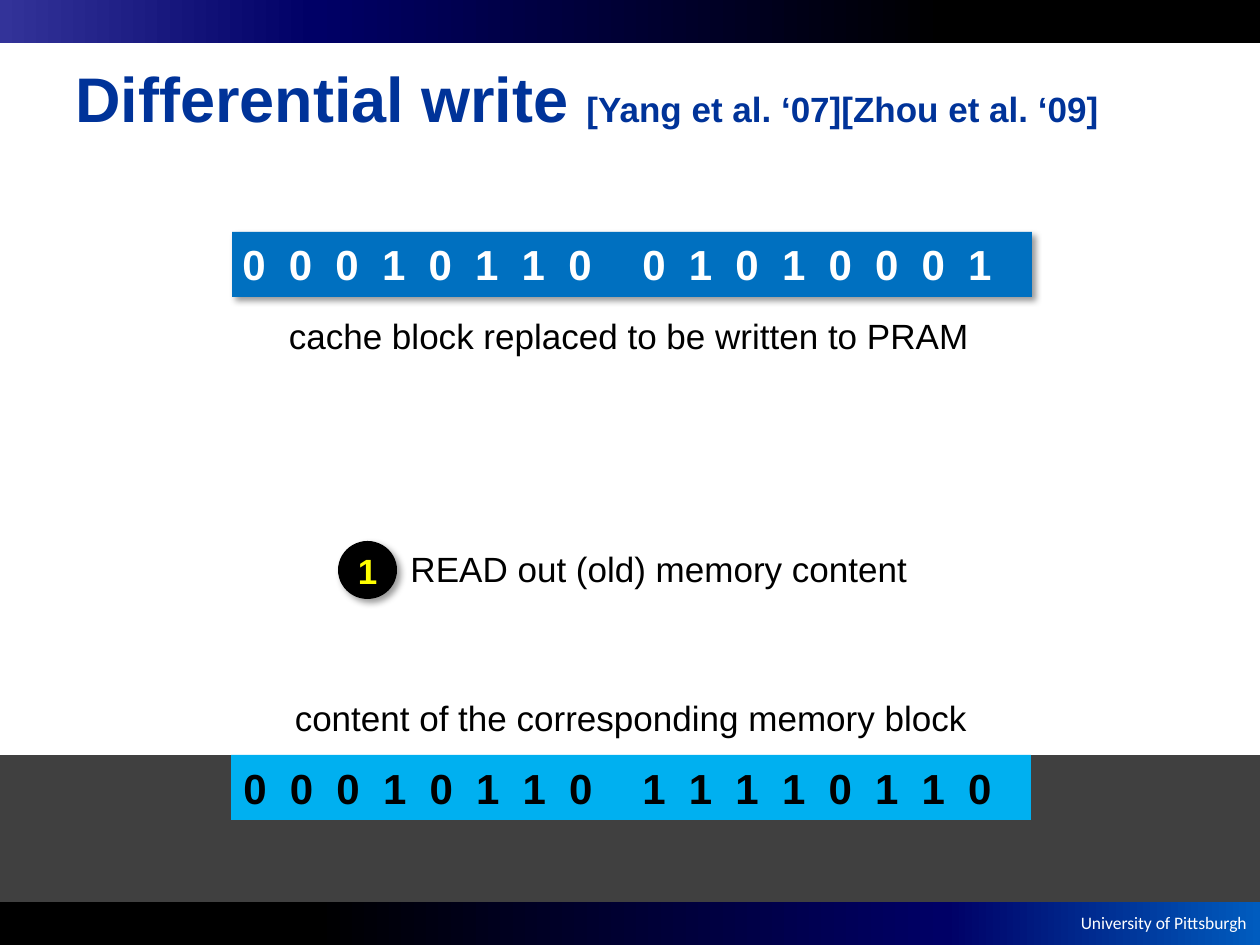
"""Build the slide on differential writes to PRAM."""
from copy import deepcopy

from lxml import etree
from pptx import Presentation
from pptx import util as u
from pptx.dml.color import RGBColor
from pptx.enum import shapes, text
from pptx.oxml import ns

PX = 914400 / 126
color = RGBColor.from_string
LEFT, CENTER, RIGHT = text.PP_ALIGN.LEFT, text.PP_ALIGN.CENTER, text.PP_ALIGN.RIGHT

deck = Presentation()
deck.slide_width, deck.slide_height = u.Inches(10), u.Inches(7.5)
page = deck.slides.add_slide(deck.slide_layouts[6])


def add_block(left, top, width, height, fill, shadow=False, kind=shapes.MSO_SHAPE.RECTANGLE):
    block = page.shapes.add_shape(kind, *(u.Emu(round(n * PX)) for n in (left, top, width, height)))
    block.shadow.inherit = False
    block.line.fill.background()
    block.fill.solid()
    block.fill.fore_color.rgb = color(fill)
    if shadow:
        effects = block._element.spPr.find(ns.qn("a:effectLst"))
        outer = etree.SubElement(effects, ns.qn("a:outerShdw"), blurRad=str(u.Pt(4)),
                                 dist=str(u.Pt(3)), dir="2700000", algn="tl", rotWithShape="0")
        tint = etree.SubElement(outer, ns.qn("a:srgbClr"), val="000000")
        etree.SubElement(tint, ns.qn("a:alpha"), val="40000")
    return block


def add_label(words, left, top, width, height, size, ink="000000", align=CENTER, bold=False, font="Arial"):
    box = page.shapes.add_textbox(*(u.Emu(round(n * PX)) for n in (left, top, width, height)))
    box.text_frame.word_wrap = True
    para = box.text_frame.paragraphs[0]
    para.text = words
    para.alignment = align
    span = para.runs[0]
    span.font.size, span.font.name, span.font.bold = u.Pt(size), font, bold
    span.font.color.rgb = color(ink)
    return box


for top, stops in (
    (902, ((0, "000000"), (0.25, "000000"), (0.75, "000066"), (1, "005CBF"))),
    (0, ((0, "333399"), (0.25, "000066"), (0.75, "000000"), (1, "000000"))),
):
    band = add_block(0, top, 1260, 43, "000000")
    band.fill.gradient()
    band.fill.gradient_angle = 0
    stop_list = band._element.spPr.find(ns.qn("a:gradFill")).find(ns.qn("a:gsLst"))
    while len(stop_list) < len(stops):
        stop_list.append(deepcopy(stop_list[0]))
    for stop, (position, shade) in zip(band.fill.gradient_stops, stops):
        stop.position = position
        stop.color.rgb = color(shade)

add_label("University of Pittsburgh", 1050, 906, 209, 34, 10, "FFFFFF", RIGHT, font="Calibri")

title = add_label("Differential write ", 63, 18, 1134, 158, 36, "003399", LEFT, True)
title.text_frame.vertical_anchor = text.MSO_ANCHOR.MIDDLE
citation = title.text_frame.paragraphs[0].add_run()
citation.text = "[Yang et al. ‘07][Zhou et al. ‘09]"
citation.font.size, citation.font.name, citation.font.bold = u.Pt(20), "Arial", True
citation.font.color.rgb = color("003399")

add_block(0, 755, 1260, 147, "404040")
add_block(231, 755, 800, 65, "00B0F0")
add_block(232, 232, 800, 65, "0070C0", shadow=True)

for bits, left, top, ink in (
    ("00010110", 230, 232, "FFFFFF"),
    ("01010001", 630, 232, "FFFFFF"),
    ("00010110", 231, 756, "000000"),
    ("11110110", 630, 756, "000000"),
):
    word = add_label(" ".join(bits), left, top, 416, 63, 24, ink, LEFT, True)
    word.text_frame.paragraphs[0].runs[0]._r.get_or_add_rPr().set("spc", "333")

for words, left, top, width in (
    ("cache block replaced to be written to PRAM", 264, 308, 730),
    ("content of the corresponding memory block", 270, 690, 722),
    ("READ out (old) memory content", 389, 541, 540),
):
    add_label(words, left, top, width, 55, 20)

step = add_block(338, 541, 59, 58, "000000", True, shapes.MSO_SHAPE.OVAL)
frame = step.text_frame
frame.margin_left = frame.margin_right = frame.margin_top = frame.margin_bottom = 0
frame.vertical_anchor = text.MSO_ANCHOR.MIDDLE
frame.text = "1"
number = frame.paragraphs[0]
number.alignment = CENTER
digit = number.runs[0].font
digit.size, digit.name, digit.bold = u.Pt(20), "Arial", True
digit.color.rgb = color("FFFF00")

deck.save("out.pptx")
